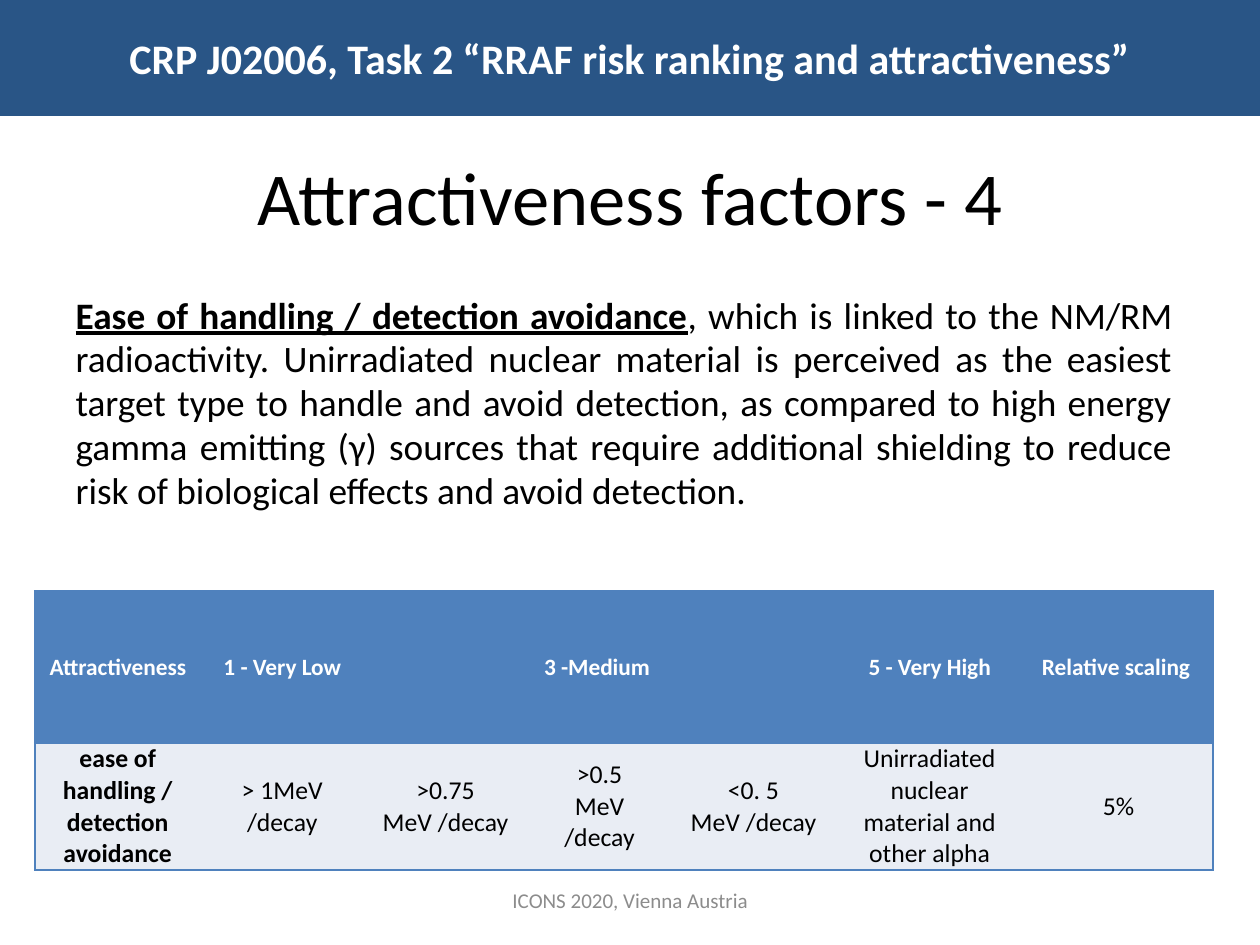
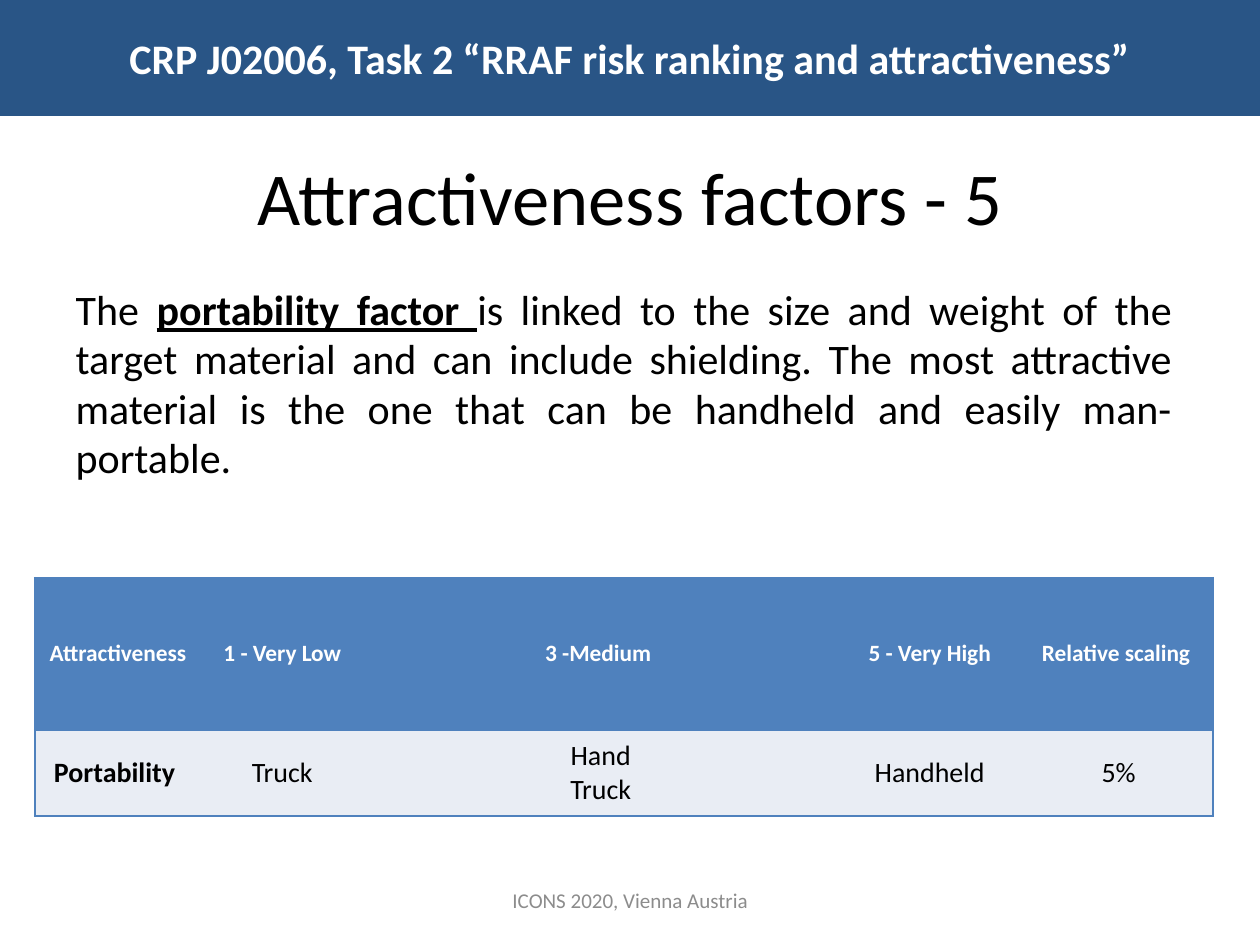
"""Build two slides on attractiveness factors."""
from lxml import etree
from pptx import Presentation
from pptx.dml.color import RGBColor
from pptx.enum import shapes, text
from pptx.oxml import ns
from pptx.util import Pt

WIDE, HIGH = 540, 405
NAVY, BLUE, PALE = "295586", "4F81BD", "E9EDF4"
WHITE, BLACK, GREY = "FFFFFF", "000000", "8C8C8C"
FONT = "Calibri"
MID = text.PP_ALIGN.CENTER
BAND = "CRP J02006, Task 2 “RRAF risk ranking and attractiveness”"
FOOT = "ICONS 2020, Vienna Austria"
HEAD = ["Attractiveness ", "1 - Very Low", "", "3 -Medium ", "",
        "5 - Very High", "Relative scaling "]
SLIDES = [
    dict(title="Attractiveness factors - 4",
         body=[("Ease of handling / detection avoidance", True),
               (", which is linked to the NM/RM radioactivity. Unirradiated "
                "nuclear material is perceived as the easiest target type to "
                "handle and avoid detection, as compared to high energy gamma "
                "emitting (γ) sources that require additional shielding to "
                "reduce risk of biological effects and avoid detection.", False)],
         size=16, top=100, gap=26,
         row=["ease of handling / detection avoidance", "> 1MeV /decay",
              ">0.75\nMeV /decay", ">0.5\nMeV\n/decay", "<0. 5\nMeV /decay",
              "Unirradiated nuclear material and other alpha", "5%"],
         small=11, pad=7.2, place=253.5, deep=54.3,
         cols=[71, 70, 70, 62, 70, 81, 81]),
    dict(title="Attractiveness factors - 5",
         body=[("The ", False), ("portability factor ", True),
               ("is linked to the size and weight of the target material and "
                "can include shielding. The most attractive material is the "
                "one that can be handheld and easily man-portable.", False)],
         size=18, top=94.5, gap=28,
         row=["Portability ", "Truck", "", "Hand Truck", "", "Handheld", "5%"],
         small=12, pad=5.4, place=247.7, deep=37,
         cols=[71, 70, 70, 63, 69, 81, 81]),
]


def tint(code):
    """Turn a hex string into a colour."""
    return RGBColor.from_string(code)


def write(para, words, size, color=BLACK, bold=False, line=False):
    """Add one run, or several split by line breaks."""
    for num, part in enumerate(words.split("\n")):
        if num:
            para.add_line_break()
        run = para.add_run()
        run.text = part
        font = run.font
        font.name, font.size, font.bold = FONT, Pt(size), bold
        font.underline = line
        font.color.rgb = tint(color)


def setup(shape, top=2.7, anchor=text.MSO_ANCHOR.MIDDLE, align=MID):
    """Set the frame of a shape and return its first paragraph."""
    frame = shape.text_frame
    frame.word_wrap = True
    frame.vertical_anchor = anchor
    frame.margin_left = frame.margin_right = Pt(5.4)
    frame.margin_top, frame.margin_bottom = Pt(top), Pt(2.7)
    para = frame.paragraphs[0]
    para.alignment = align
    return para


def box(slide, *area):
    """Add a text box placed in points."""
    return slide.shapes.add_textbox(*map(Pt, area))


def frame(slide, title):
    """Draw the band, title and footer that the slides share."""
    band = slide.shapes.add_shape(shapes.MSO_SHAPE.RECTANGLE, 0, 0,
                                  Pt(WIDE), Pt(49.7))
    band.shadow.inherit = False
    band.fill.solid()
    band.fill.fore_color.rgb = tint(NAVY)
    band.line.fill.background()
    write(setup(band), BAND, 18, WHITE, True)
    write(setup(box(slide, 27, 50, 486, 67.5)), title, 32)
    write(setup(box(slide, 184.5, 375, 171, 21.6)), FOOT, 9, GREY)


def edge(cell, sides):
    """Draw the named sides of a cell and clear the others."""
    props = cell._tc.get_or_add_tcPr()
    for side in "LRTB":
        line = etree.SubElement(props, ns.qn("a:ln" + side), w=str(Pt(1)))
        if side in sides:
            fill = etree.SubElement(line, ns.qn("a:solidFill"))
            etree.SubElement(fill, ns.qn("a:srgbClr"), val=BLUE)
        else:
            etree.SubElement(line, ns.qn("a:noFill"))


def grid(slide, data):
    """Add the rating table."""
    cols, rows = data["cols"], [HEAD, data["row"]]
    highs = [65, data["deep"]]
    area = (15, data["place"], sum(cols), sum(highs))
    table = slide.shapes.add_table(2, len(cols), *map(Pt, area)).table
    last = len(cols) - 1
    for col, wide in zip(table.columns, cols):
        col.width = Pt(wide)
    for r, row in enumerate(rows):
        table.rows[r].height = Pt(highs[r])
        for c, words in enumerate(row):
            cell = table.cell(r, c)
            edge(cell, "TB" + "L" * (c == 0) + "R" * (c == last))
            cell.fill.solid()
            cell.fill.fore_color.rgb = tint(PALE if r else BLUE)
            cell.vertical_anchor = text.MSO_ANCHOR.MIDDLE
            pad = data["pad"] if r and 0 < c < last else 5.4
            cell.margin_left = cell.margin_right = Pt(pad)
            cell.margin_top = cell.margin_bottom = 0
            para = cell.text_frame.paragraphs[0]
            para.alignment, para.space_after = MID, Pt(6)
            if words:
                write(para, words, data["small"] if r else 10,
                      BLACK if r else WHITE, r == 0 or c == 0)


def main():
    """Build and save the slides."""
    deck = Presentation()
    deck.slide_width, deck.slide_height = Pt(WIDE), Pt(HIGH)
    for data in SLIDES:
        slide = deck.slides.add_slide(deck.slide_layouts[6])
        frame(slide, data["title"])
        para = setup(box(slide, 27, data["top"], 481, 119.5), data["gap"],
                     text.MSO_ANCHOR.TOP, text.PP_ALIGN.JUSTIFY)
        para.line_spacing = 0.98
        for words, key in data["body"]:
            write(para, words, data["size"], bold=key, line=key)
        grid(slide, data)
    deck.save("out.pptx")


if __name__ == "__main__":
    main()
